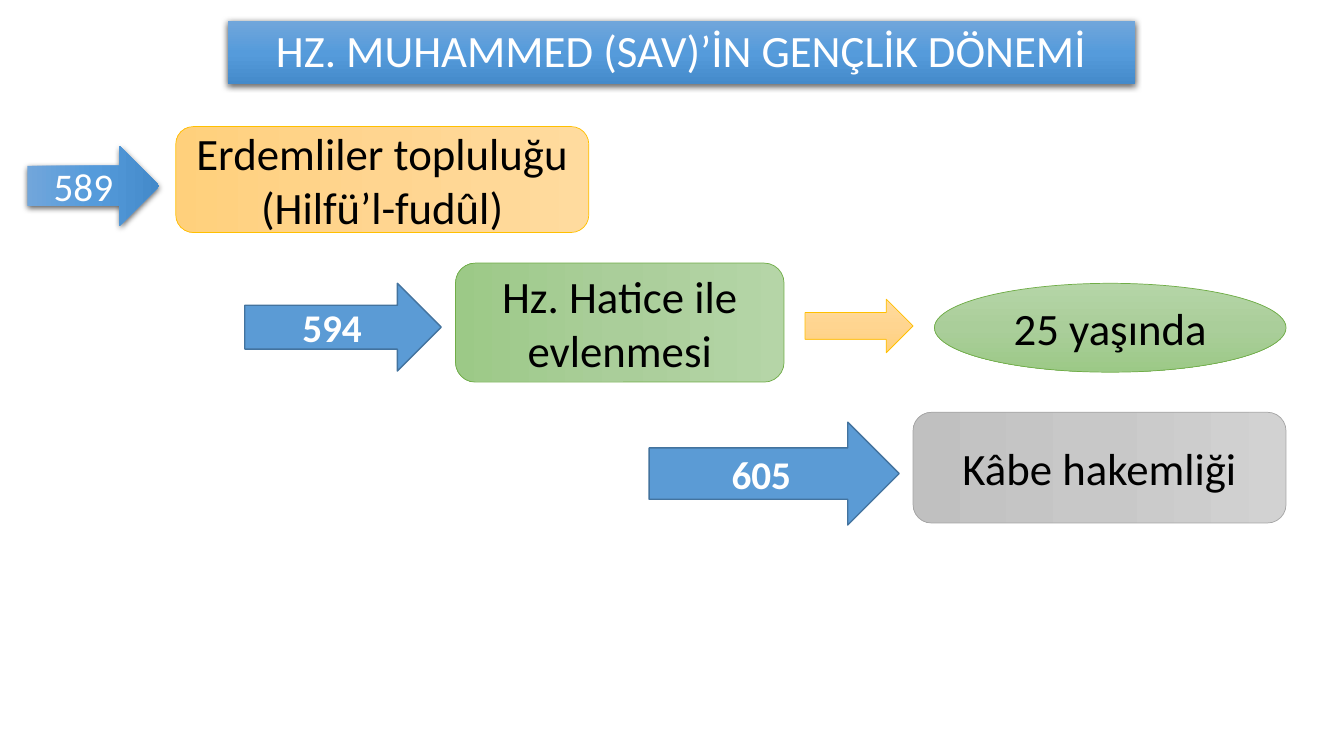
import copy
from dataclasses import dataclass
from typing import Optional

import pptx
import pptx.dml.color
import pptx.enum.dml
import pptx.enum.shapes
import pptx.enum.text
import pptx.oxml
import pptx.oxml.ns
import pptx.util

Cm = pptx.util.Cm
Pt = pptx.util.Pt
Kind = pptx.enum.shapes.MSO_SHAPE
RIGHT, DOWN, LEFT = 0, 270, 180


@dataclass(frozen=True)
class Paint:
    shades: tuple[str, ...]
    edge: Optional[str] = None
    width: float = 0.5


@dataclass(frozen=True)
class Theme:
    font: str = "Calibri"
    large: int = 32
    small: int = 28
    white: str = "FFFFFF"
    black: str = "000000"
    blue: Paint = Paint(("71A6DB", "559BDB", "448ACA"))
    flat: Paint = Paint(("5B9BD5",), "43739E", 1)
    gold: Paint = Paint(("FFDB9E", "FFD590", "FFD07C"), "FFC000")
    green: Paint = Paint(("B5D5A7", "AACE9A", "9CC987"), "70AD47")
    gray: Paint = Paint(("D2D2D2", "C8C8C8", "C0C0C0"), "A5A5A5")


THEME = Theme()


@dataclass(frozen=True)
class Item:
    kind: Kind
    box: tuple[float, float, float, float]
    paint: Paint
    text: str = ""
    angle: int = DOWN
    size: int = THEME.large
    color: str = THEME.black
    bold: bool = False
    shadow: bool = False


TITLE = Item(Kind.RECTANGLE, (5.74, 0.53, 22.86, 1.6), THEME.blue,
             "HZ. MUHAMMED (SAV)’İN GENÇLİK DÖNEMİ",
             color=THEME.white, shadow=True)


def year(text: str, box: tuple[float, float, float, float], paint: Paint,
         bold: bool = True, shadow: bool = False) -> Item:
    return Item(Kind.RIGHT_ARROW, box, paint, text, RIGHT, THEME.small,
                THEME.white, bold, shadow)


def event(text: str, box: tuple[float, float, float, float],
          paint: Paint) -> Item:
    return Item(Kind.ROUNDED_RECTANGLE, box, paint, text, LEFT)


ITEMS = (
    year("589", (0.69, 3.68, 3.33, 2.01), THEME.blue, False, True),
    event("Erdemliler topluluğu\n(Hilfü’l-fudûl)",
          (4.43, 3.19, 10.41, 2.67), THEME.gold),
    event("Hz. Hatice ile evlenmesi", (11.48, 6.63, 8.28, 3), THEME.green),
    year("594", (6.17, 7.14, 4.95, 2.21), THEME.flat),
    year("605", (16.36, 10.64, 6.3, 2.59), THEME.flat),
    event("Kâbe hakemliği", (23.01, 10.39, 9.4, 2.79), THEME.gray),
    Item(Kind.RIGHT_ARROW, (20.29, 7.54, 2.72, 1.35), THEME.gold),
    Item(Kind.OVAL, (23.55, 7.14, 8.86, 2.24), THEME.green, "25 yaşında"),
)


def rgb(value: str) -> pptx.dml.color.RGBColor:
    return pptx.dml.color.RGBColor.from_string(value)


def fill_shape(shape, paint: Paint, angle: int) -> None:
    if len(paint.shades) == 1:
        shape.fill.solid()
        shape.fill.fore_color.rgb = rgb(paint.shades[0])
    else:
        shape.fill.gradient()
        shape.fill.gradient_angle = angle
        stops = shape.element.spPr.find(".//" + pptx.oxml.ns.qn("a:gsLst"))
        stops.append(copy.deepcopy(stops[0]))
        for i, stop in enumerate(shape.fill.gradient_stops):
            stop.position = i / 2
            stop.color.rgb = rgb(paint.shades[i])
    if paint.edge:
        shape.line.color.rgb = rgb(paint.edge)
        shape.line.width = Pt(paint.width)
    else:
        shape.line.fill.background()


def cast_shadow(shape) -> None:
    effects = shape.element.spPr.find(pptx.oxml.ns.qn("a:effectLst"))
    effects.append(pptx.oxml.parse_xml(
        f'<a:outerShdw {pptx.oxml.ns.nsdecls("a")} blurRad="{Pt(4.5)}" '
        f'dist="{Pt(1.5)}" dir="5400000" algn="ctr" rotWithShape="0">'
        f'<a:srgbClr val="{THEME.black}"><a:alpha val="63000"/></a:srgbClr>'
        '</a:outerShdw>'))


def write_text(shape, item: Item) -> None:
    frame = shape.text_frame
    frame.text = item.text
    frame.word_wrap = True
    frame.auto_size = pptx.enum.text.MSO_AUTO_SIZE.NONE
    frame.vertical_anchor = pptx.enum.text.MSO_ANCHOR.MIDDLE
    for para in frame.paragraphs:
        para.alignment = pptx.enum.text.PP_ALIGN.CENTER
        for run in para.runs:
            run.font.name = THEME.font
            run.font.size = Pt(item.size)
            run.font.bold = item.bold
            run.font.color.rgb = rgb(item.color)


def style(shape, item: Item) -> None:
    shape.shadow.inherit = False
    fill_shape(shape, item.paint, item.angle)
    if item.shadow:
        cast_shadow(shape)
    if item.text:
        write_text(shape, item)


def main() -> None:
    deck = pptx.Presentation()
    deck.slide_width, deck.slide_height = Cm(33.87), Cm(19.05)
    slide = deck.slides.add_slide(deck.slide_layouts[5])
    title = slide.shapes.title
    title.left, title.top, title.width, title.height = map(Cm, TITLE.box)
    style(title, TITLE)
    title.text_frame.paragraphs[0].line_spacing = 0.9
    for item in ITEMS:
        style(slide.shapes.add_shape(item.kind, *map(Cm, item.box)), item)
    deck.save("out.pptx")


if __name__ == "__main__":
    main()
